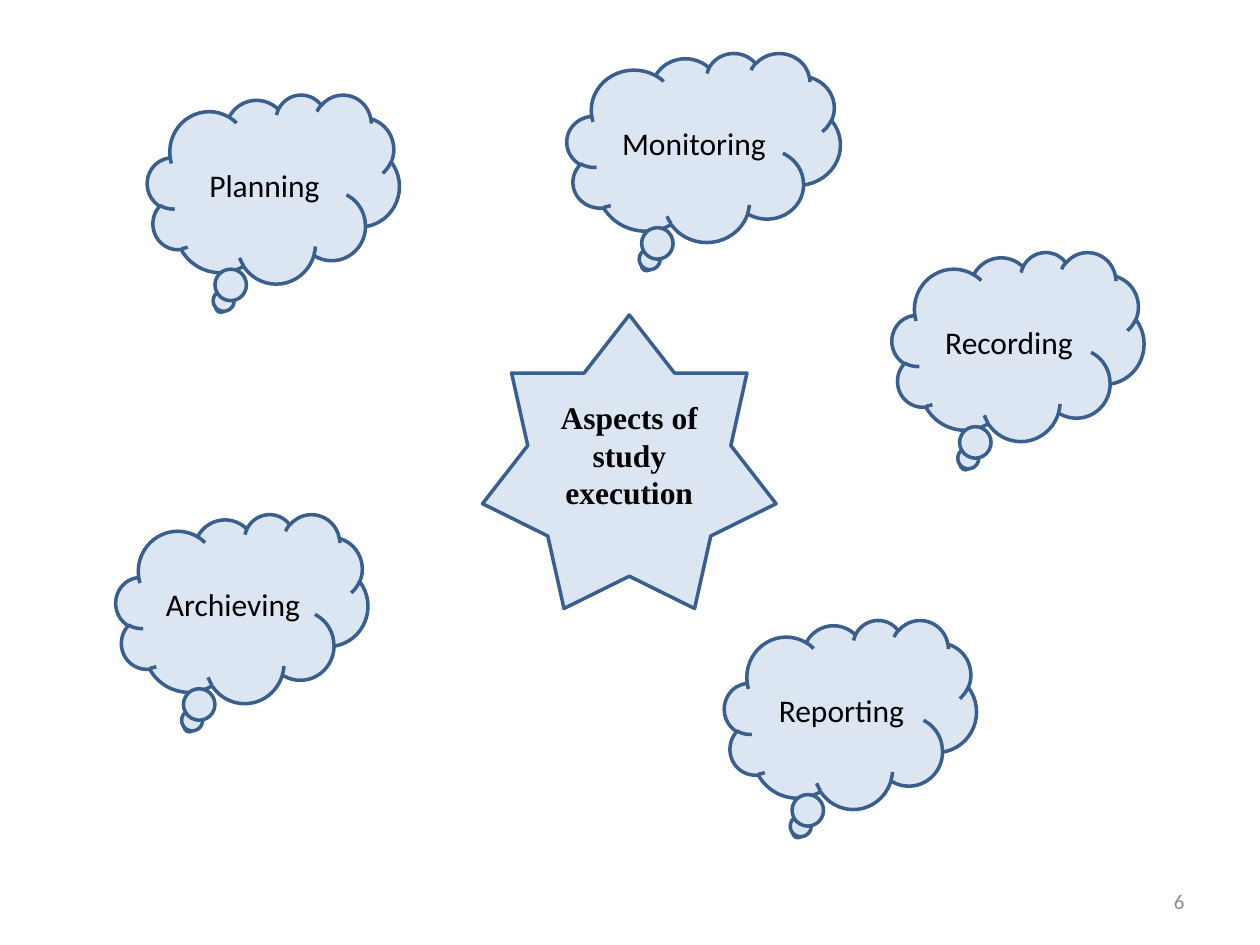
"""Build a slide showing the aspects of study execution around a central star."""
from dataclasses import dataclass

from pptx import Presentation
from pptx.dml.color import RGBColor
from pptx.enum.shapes import MSO_SHAPE as Preset
from pptx.enum.text import MSO_ANCHOR as Anchor, PP_ALIGN as Align
from pptx.slide import Slide
from pptx.text.text import TextFrame
from pptx.util import Inches, Pt

COLORS = {"fill": "DCE6F2", "line": "3A5F8C", "text": "000000", "number": "8C8C8C"}
CLOUD_FORMAT = {"name": "Calibri", "size": Pt(18), "bold": False}
STAR_FORMAT = {"name": "Times New Roman", "size": Pt(18), "bold": True}
NUMBER_FORMAT = {"name": "Calibri", "size": Pt(12), "bold": False}


@dataclass(frozen=True)
class Aspect:
    label: str
    left: float
    top: float
    width: float = 2
    height: float = 1.5


ASPECTS = [
    Aspect("Planning", 1.17, 0.75),
    Aspect("Monitoring", 4.5, 0.42, width=2.17),
    Aspect("Recording", 7.08, 2),
    Aspect("Reporting", 5.75, 4.92),
    Aspect("Archieving", 0.92, 4.08),
]
CENTER = Aspect("Aspects of study execution", 3.83, 2.5, 2.33, 2.33)
PAGE_NUMBER = Aspect("6", 7.17, 6.95, 2.33, 0.4)


def color(name: str) -> RGBColor:
    """Return a palette colour."""
    return RGBColor.from_string(COLORS[name])


def box(item: Aspect) -> list[int]:
    """Return left, top, width and height as lengths."""
    return [Inches(value) for value in (item.left, item.top, item.width, item.height)]


def write(frame: TextFrame, text: str, text_format: dict, align: Align, color_name: str) -> None:
    """Write one formatted, vertically centred paragraph."""
    frame.word_wrap = True
    frame.vertical_anchor = Anchor.MIDDLE
    paragraph = frame.paragraphs[0]
    paragraph.alignment = align
    run = paragraph.add_run()
    run.text = text
    for attribute, value in text_format.items():
        setattr(run.font, attribute, value)
    run.font.color.rgb = color(color_name)


def draw_aspect(slide: Slide, item: Aspect, preset: Preset, text_format: dict) -> None:
    """Draw one outlined shape with its label."""
    shape = slide.shapes.add_shape(preset, *box(item))
    shape.shadow.inherit = False
    shape.fill.solid()
    shape.fill.fore_color.rgb = color("fill")
    shape.line.color.rgb = color("line")
    shape.line.width = Pt(2)
    write(shape.text_frame, item.label, text_format, Align.CENTER, "text")


def main() -> None:
    """Create and save the presentation."""
    presentation = Presentation()
    presentation.slide_width = Inches(10)
    presentation.slide_height = Inches(7.5)
    slide = presentation.slides.add_slide(presentation.slide_layouts.get_by_name("Blank"))

    number = slide.shapes.add_textbox(*box(PAGE_NUMBER))
    write(number.text_frame, PAGE_NUMBER.label, NUMBER_FORMAT, Align.RIGHT, "number")
    draw_aspect(slide, CENTER, Preset.STAR_7_POINT, STAR_FORMAT)
    for aspect in ASPECTS:
        draw_aspect(slide, aspect, Preset.CLOUD_CALLOUT, CLOUD_FORMAT)

    presentation.save("out.pptx")


if __name__ == "__main__":
    main()
